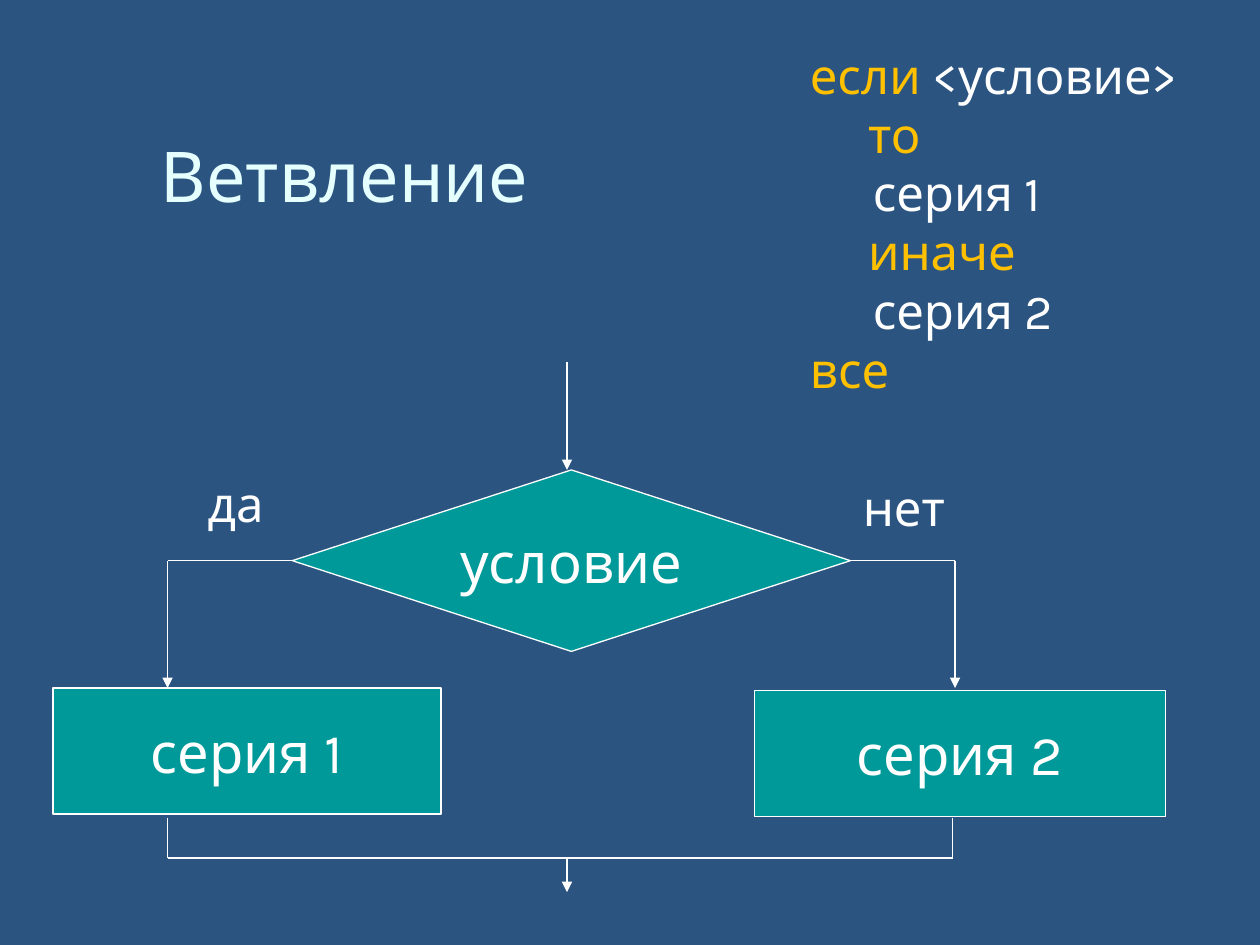
from dataclasses import dataclass

from lxml import etree
from pptx import Presentation
from pptx.dml.color import RGBColor
from pptx.enum.shapes import MSO_CONNECTOR, MSO_SHAPE
from pptx.enum.text import MSO_ANCHOR, PP_ALIGN
from pptx.oxml.ns import qn
from pptx.util import Inches, Pt

STRAIGHT = MSO_CONNECTOR.STRAIGHT
DECISION, PROCESS = MSO_SHAPE.FLOWCHART_DECISION, MSO_SHAPE.FLOWCHART_PROCESS
CENTER, LEFT = PP_ALIGN.CENTER, PP_ALIGN.LEFT
MIDDLE, TOP = MSO_ANCHOR.MIDDLE, MSO_ANCHOR.TOP
LEFT_SITE, RIGHT_SITE = 1, 3


@dataclass(frozen=True)
class Theme:
    font: str = "Karla"
    background: str = "2B5481"
    title: str = "E5FFFF"
    text: str = "FFFFFF"
    keyword: str = "FFC000"
    block: str = "009999"
    title_size: int = 40
    block_size: int = 32
    body_size: int = 28
    line_width: float = 0.75


THEME = Theme()

# Content
TITLE = "Ветвление"
PSEUDOCODE = [
    [("если ", THEME.keyword), ("<условие>", THEME.text)],
    [("     то", THEME.keyword)],
    [("\tсерия 1", THEME.text)],
    [("     иначе", THEME.keyword)],
    [("\tсерия 2", THEME.text)],
    [("все", THEME.keyword)],
]

# Flowchart columns (x) and rows (y), in inches
YES_X, MAIN_X, NO_X, NO_EXIT_X = 1.33, 4.5, 7.58, 7.56
START_Y, DECISION_Y, BRANCH_Y = 2.87, 3.73, 4.45
BLOCK_Y, EXIT_Y, MERGE_Y, END_Y = 5.46, 6.49, 6.81, 7.08

BLOCKS = {
    "условие": (DECISION, (2.32, DECISION_Y, 4.43, 2 * (BRANCH_Y - DECISION_Y))),
    "серия 1": (PROCESS, (0.42, BLOCK_Y, 3.08, 1)),
    "серия 2": (PROCESS, (5.99, BLOCK_Y + 0.02, 3.26, 1)),
}
BRANCH_LABELS = [
    ("да", (1.55, 3.71, 1.12, 0.57)),
    ("нет", (6.75, 3.74, 1.08, 0.57)),
]
BRANCHES = [(LEFT_SITE, YES_X), (RIGHT_SITE, NO_X)]
ARROWS = [
    ((MAIN_X, START_Y), (MAIN_X, DECISION_Y)),
    ((YES_X, BRANCH_Y), (YES_X, BLOCK_Y)),
    ((NO_X, BRANCH_Y), (NO_X, BLOCK_Y)),
    ((MAIN_X, MERGE_Y), (MAIN_X, END_Y)),
]
MERGE_LINES = [
    ((YES_X, EXIT_Y), (YES_X, MERGE_Y)),
    ((NO_EXIT_X, EXIT_Y), (NO_EXIT_X, MERGE_Y)),
    ((YES_X, MERGE_Y), (NO_EXIT_X, MERGE_Y)),
]


def color(value):
    return RGBColor.from_string(value)


def inches(values):
    return [Inches(value) for value in values]


def write(shape, lines, size, align=LEFT, anchor=TOP, wrap=True):
    frame = shape.text_frame
    frame.word_wrap = wrap
    frame.vertical_anchor = anchor
    for index, runs in enumerate(lines):
        paragraph = frame.add_paragraph() if index else frame.paragraphs[0]
        paragraph.alignment = align
        for text, run_color in runs:
            run = paragraph.add_run()
            run.text = text
            run.font.name = THEME.font
            run.font.size = Pt(size)
            run.font.color.rgb = color(run_color)


def style_line(line):
    line.color.rgb = color(THEME.text)
    line.width = Pt(THEME.line_width)


def add_text(slide, box, lines):
    write(slide.shapes.add_textbox(*inches(box)), lines, THEME.body_size)


def add_block(slide, text, kind, box):
    shape = slide.shapes.add_shape(kind, *inches(box))
    shape.shadow.inherit = False
    shape.fill.solid()
    shape.fill.fore_color.rgb = color(THEME.block)
    style_line(shape.line)
    write(shape, [[(text, THEME.text)]], THEME.block_size, CENTER, MIDDLE, wrap=False)
    return shape


def add_line(slide, start, end, arrow=False):
    connector = slide.shapes.add_connector(STRAIGHT, *inches(start + end))
    style_line(connector.line)
    properties = connector._element.spPr
    if arrow:
        etree.SubElement(properties.find(qn("a:ln")), qn("a:tailEnd"), type="triangle")
    etree.SubElement(properties, qn("a:effectLst"))
    return connector


def main():
    presentation = Presentation()
    presentation.slide_width, presentation.slide_height = inches((10, 7.5))
    slide = presentation.slides.add_slide(presentation.slide_layouts[5])
    slide.background.fill.solid()
    slide.background.fill.fore_color.rgb = color(THEME.background)

    # Title and pseudocode
    title = slide.shapes.title
    title.left, title.top, title.width, title.height = inches((0.4, 1.01, 4.67, 0.75))
    write(title, [[(TITLE, THEME.title)]], THEME.title_size, CENTER, MIDDLE)
    add_text(slide, (6.33, 0.31, 4.08, 2.17), PSEUDOCODE)

    # Flowchart blocks and branch labels
    blocks = {text: add_block(slide, text, *spec_pair) for text, spec_pair in BLOCKS.items()}
    for text, box in BRANCH_LABELS:
        add_text(slide, box, [[(text, THEME.text)]])

    # Branches leaving the decision, then arrows and the merge
    for site, x in BRANCHES:
        branch = add_line(slide, (MAIN_X, BRANCH_Y), (x, BRANCH_Y))
        branch.begin_connect(blocks["условие"], site)
    for start, end in ARROWS:
        add_line(slide, start, end, arrow=True)
    for start, end in MERGE_LINES:
        add_line(slide, start, end)

    presentation.save("out.pptx")


if __name__ == "__main__":
    main()
